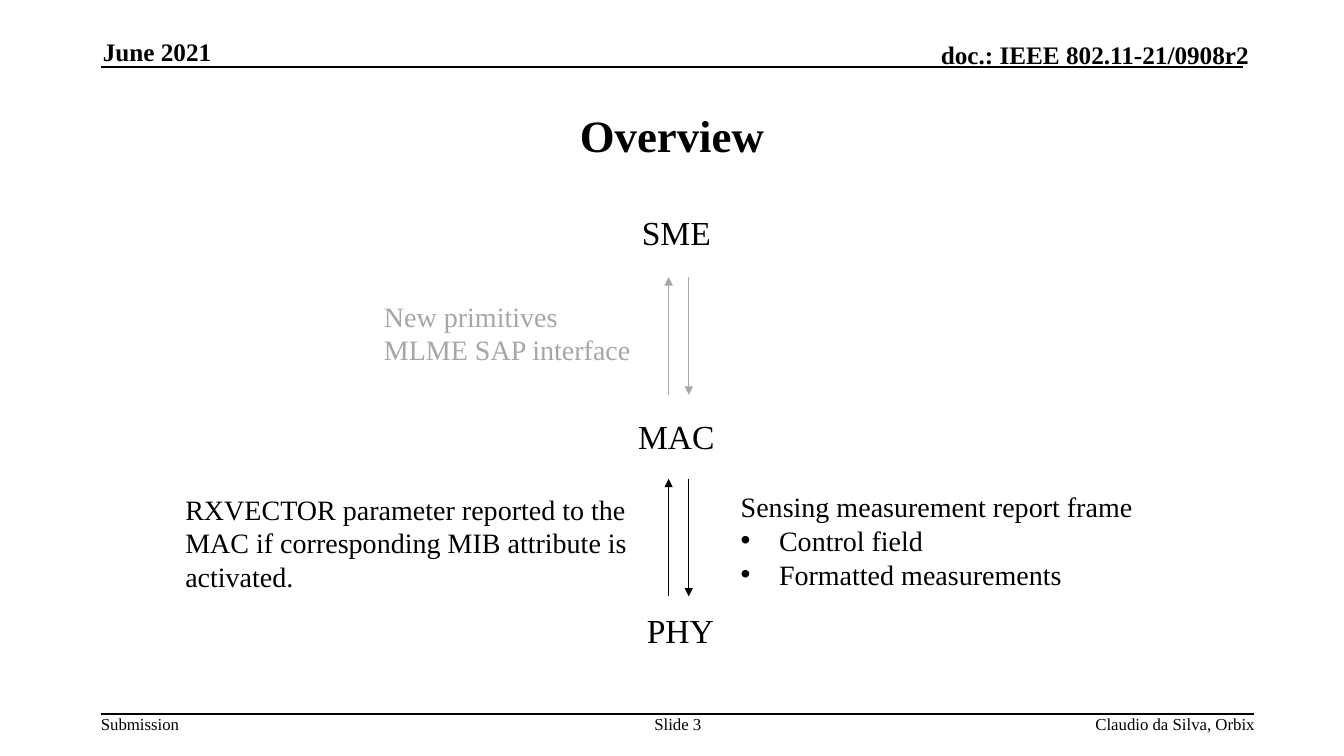
from dataclasses import dataclass

from lxml import etree
from pptx import Presentation
from pptx import util as u
from pptx.dml.color import RGBColor
from pptx.enum import shapes, text
from pptx.oxml import ns

BLACK = RGBColor(0x00, 0x00, 0x00)
GRAY = RGBColor(0xA6, 0xA6, 0xA6)
FONT = "Times New Roman"
LEFT, CENTER, RIGHT = (text.PP_ALIGN.LEFT, text.PP_ALIGN.CENTER,
                       text.PP_ALIGN.RIGHT)
TOP, MIDDLE, BOTTOM = (text.MSO_ANCHOR.TOP, text.MSO_ANCHOR.MIDDLE,
                       text.MSO_ANCHOR.BOTTOM)

# The slide is a grid of 80 columns and 45 rows
WIDTH, HEIGHT = u.Inches(13.33), u.Inches(7.5)
COLUMN, ROW = WIDTH / 80, HEIGHT / 45
INSETS = (u.Inches(0.1), u.Inches(0.05))
NO_INSETS = (0, 0)


@dataclass
class Box:
    """A region in grid units."""
    left: float
    top: float
    width: float
    height: float

    def inner(self, left, top, width, height):
        return Box(self.left + left, self.top + top, width, height)

    def lengths(self):
        return [round(value * unit) for value, unit in
                zip((self.left, self.top, self.width, self.height),
                    (COLUMN, ROW, COLUMN, ROW))]


def add_bullet(para):
    props = para._p.get_or_add_pPr()
    props.set("marL", str(u.Inches(0.38)))
    props.set("indent", str(-u.Inches(0.38)))
    font = etree.SubElement(props, ns.qn("a:buFont"))
    font.set("typeface", "Arial")
    etree.SubElement(props, ns.qn("a:buChar")).set("char", "•")


def fill_text(frame, lines, size, color=BLACK, bold=False, align=LEFT,
              anchor=TOP, insets=INSETS, bullets_from=None):
    frame.word_wrap = True
    frame.auto_size = text.MSO_AUTO_SIZE.NONE
    frame.vertical_anchor = anchor
    frame.margin_left = frame.margin_right = insets[0]
    frame.margin_top = frame.margin_bottom = insets[1]
    for index, line in enumerate(lines):
        para = frame.add_paragraph() if index else frame.paragraphs[0]
        para.alignment = align
        if bullets_from is not None and index >= bullets_from:
            add_bullet(para)
        span = para.add_run()
        span.text = line
        span.font.name = FONT
        span.font.size = u.Pt(size)
        span.font.bold = bold
        span.font.color.rgb = color


def add_text(page, box, lines, size, **style):
    shape = page.shapes.add_textbox(*box.lengths())
    fill_text(shape.text_frame, lines, size, **style)


def add_line(page, box, color=BLACK, weight=1, arrow=False):
    """Draw from the box's left top corner to its right bottom corner."""
    left, top, width, height = box.lengths()
    line = page.shapes.add_connector(shapes.MSO_CONNECTOR.STRAIGHT, left, top,
                                     left + width, top + height)
    line.line.color.rgb = color
    line.line.width = u.Pt(weight)
    if arrow:
        end = etree.SubElement(line.line._get_or_add_ln(), ns.qn("a:tailEnd"))
        end.set("type", "triangle")
    etree.SubElement(line._element.spPr, ns.qn("a:effectLst"))


def add_header(page, box):
    style = dict(size=18, bold=True, anchor=BOTTOM, insets=NO_INSETS)
    add_line(page, box.inner(0, box.height, box.width, 0))
    add_text(page, box.inner(0.12, 0.16, 16.4, 1.8), ["June 2021"], **style)
    add_text(page, box.inner(37.74, 0.34, 30.6, 1.8),
             ["doc.: IEEE 802.11-21/0908r2"], align=RIGHT, **style)


def add_title(page, box):
    title = page.shapes.title
    title.left, title.top, title.width, title.height = box.lengths()
    fill_text(title.text_frame, ["Overview"], 32, bold=True, align=CENTER,
              anchor=MIDDLE)


def add_footer(page, box):
    add_line(page, box.inner(0, 0, box.width, 0))
    for line, left, width, align in (
            ("Submission", 0, 6, LEFT),
            ("Slide 3", 32.04, 4.62, CENTER),
            ("Claudio da Silva, Orbix", 40.86, 27.84, RIGHT)):
        add_text(page, box.inner(left, 0, width, box.height), [line], 12,
                 align=align, insets=NO_INSETS)


def add_layers(page, box):
    # Layer names, top to bottom
    for name, left, top in (("SME", 29.76, 0.3), ("MAC", 29.76, 12.48),
                            ("PHY", 30, 24)):
        add_text(page, box.inner(left, top, 9, 3), [name], 24, align=CENTER)

    # An upward and a downward arrow between neighbouring layers
    for step, color in enumerate((GRAY, BLACK)):
        top = 4.5 + 12 * step
        add_line(page, box.inner(33.8, top + 7, 0, -7), color, 0.75, True)
        add_line(page, box.inner(35, top, 0, 7), color, 0.75, True)

    # Notes beside the arrows
    add_text(page, box.inner(16.26, 5.52, 16.5, 4.62),
             ["New primitives", "MLME SAP interface"], 20, color=GRAY)
    add_text(page, box.inner(4.44, 17, 30.06, 6.66),
             ["RXVECTOR parameter reported to the MAC if corresponding "
              "MIB attribute is activated."], 20)
    add_text(page, box.inner(37.5, 16.86, 25.26, 6.66),
             ["Sensing measurement report frame", "Control field",
              "Formatted measurements"], 20, bullets_from=1)


def main():
    deck = Presentation()
    deck.slide_width, deck.slide_height = WIDTH, HEIGHT
    page = deck.slides.add_slide(deck.slide_layouts[5])
    add_header(page, Box(6, 2, 68, 2))
    add_title(page, Box(6, 4.5, 68, 7))
    add_layers(page, Box(6, 12, 68, 27))
    add_footer(page, Box(6, 42.5, 68.64, 1.2))
    deck.save("out.pptx")


if __name__ == "__main__":
    main()
